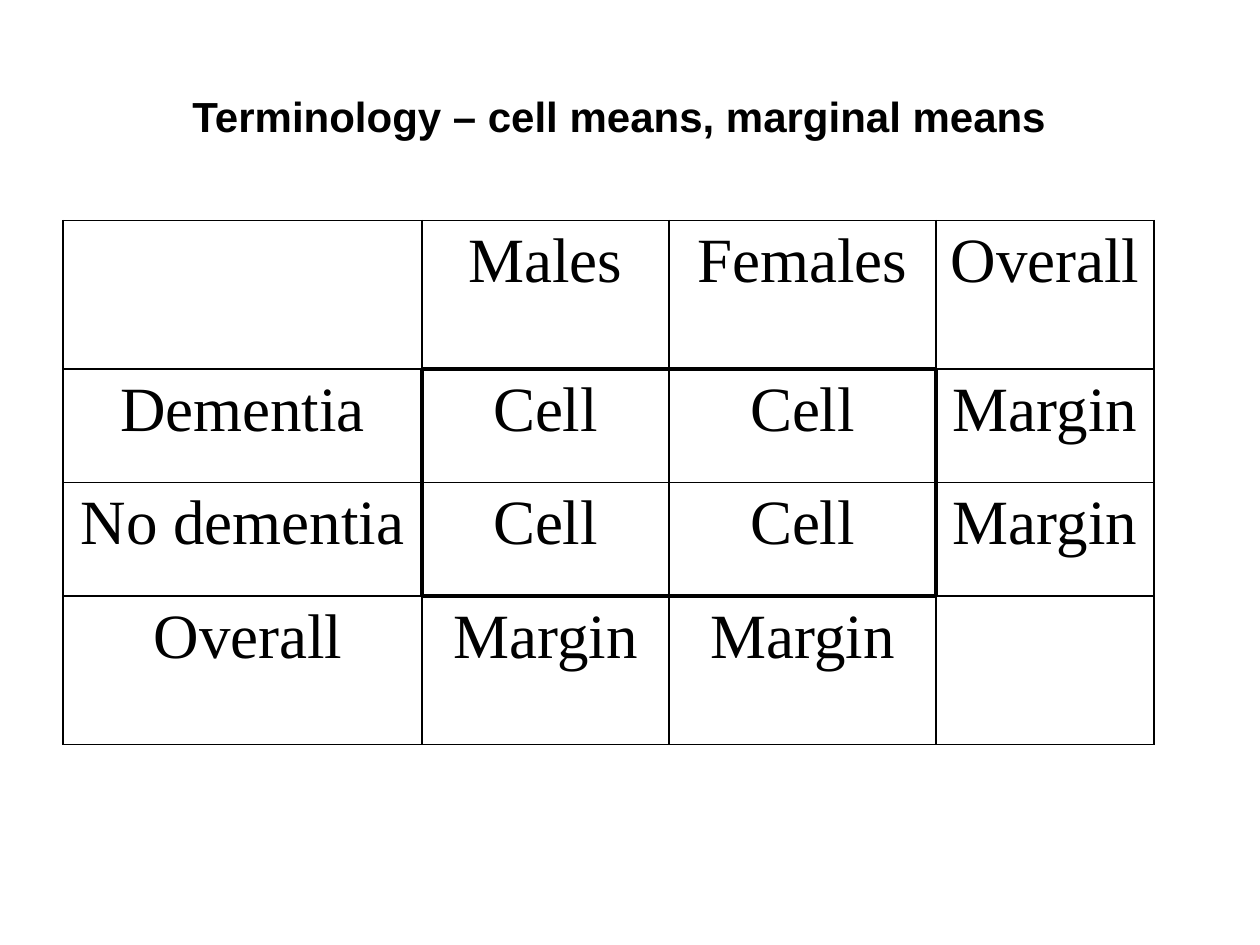
from lxml import etree
from pptx import Presentation
from pptx.dml.color import RGBColor
from pptx.enum.text import PP_ALIGN
from pptx.oxml.ns import qn
from pptx.util import Inches, Pt

CENTER = PP_ALIGN.CENTER
LEFT = PP_ALIGN.LEFT
COLORS = {"ink": "000000"}
TITLE_FONT = {"name": "Arial", "size": Pt(24), "bold": True}
CELL_FONT = {"name": "Times New Roman", "size": Pt(36), "bold": False}
COLUMN_WIDTHS = [2.85, 1.96, 2.12, 1.73]
ROW_HEIGHTS = [1.18, 0.9, 0.9, 1.18]
ROWS = [
    ["", "Males", "Females", "Overall"],
    ["Dementia", "Cell", "Cell", "Margin"],
    ["No dementia", "Cell", "Cell", "Margin"],
    ["Overall", "Margin", "Margin", ""],
]
CELL_MEANS = {(row, column) for row in (1, 2) for column in (1, 2)}
SIDES = {"lnL": (0, -1), "lnR": (0, 1), "lnT": (-1, 0), "lnB": (1, 0)}
BORDER_WIDTHS = {0: Pt(1), 1: Pt(3), 2: Pt(0.75)}


def write_text(paragraph, text, font_format, alignment):
    paragraph.alignment = alignment
    run = paragraph.add_run()
    run.text = text
    for name, value in font_format.items():
        setattr(run.font, name, value)
    run.font.color.rgb = RGBColor.from_string(COLORS["ink"])


def add_border(cell, side, width):
    properties = cell._tc.get_or_add_tcPr()
    line = etree.Element(qn(f"a:{side}"), w=str(width))
    fill = etree.SubElement(line, qn("a:solidFill"))
    etree.SubElement(fill, qn("a:srgbClr"), val=COLORS["ink"])
    properties.insert(list(SIDES).index(side), line)


presentation = Presentation()
presentation.slide_width = Inches(10)
presentation.slide_height = Inches(7.5)
slide = presentation.slides.add_slide(presentation.slide_layouts[6])

table_frame = slide.shapes.add_table(
    len(ROWS), len(COLUMN_WIDTHS), Inches(0.5), Inches(1.75),
    Inches(sum(COLUMN_WIDTHS)), Inches(sum(ROW_HEIGHTS)),
)
table = table_frame.table
table.first_row = False
table.horz_banding = False
for column, width in zip(table.columns, COLUMN_WIDTHS):
    column.width = Inches(width)
for row, height in zip(table.rows, ROW_HEIGHTS):
    row.height = Inches(height)

for row_index, labels in enumerate(ROWS):
    for column_index, label in enumerate(labels):
        cell = table.cell(row_index, column_index)
        cell.fill.background()
        for side, (row_step, column_step) in SIDES.items():
            neighbours = {
                (row_index, column_index),
                (row_index + row_step, column_index + column_step),
            }
            add_border(cell, side, BORDER_WIDTHS[len(neighbours & CELL_MEANS)])
        if label:
            paragraph = cell.text_frame.paragraphs[0]
            is_total_label = (row_index, column_index) == (3, 0)
            write_text(paragraph, label, CELL_FONT, LEFT if is_total_label else CENTER)
            indent = (0.62, 0) if is_total_label else (0.38, -0.38)
            paragraph_properties = paragraph._p.get_or_add_pPr()
            for name, value in zip(("marL", "indent"), indent):
                paragraph_properties.set(name, str(Inches(value)))

title = slide.shapes.add_textbox(Inches(1.25), Inches(0.67), Inches(7.33), Inches(0.5))
title.text_frame.word_wrap = True
write_text(
    title.text_frame.paragraphs[0],
    "Terminology – cell means, marginal means", TITLE_FONT, CENTER,
)

presentation.save("out.pptx")
